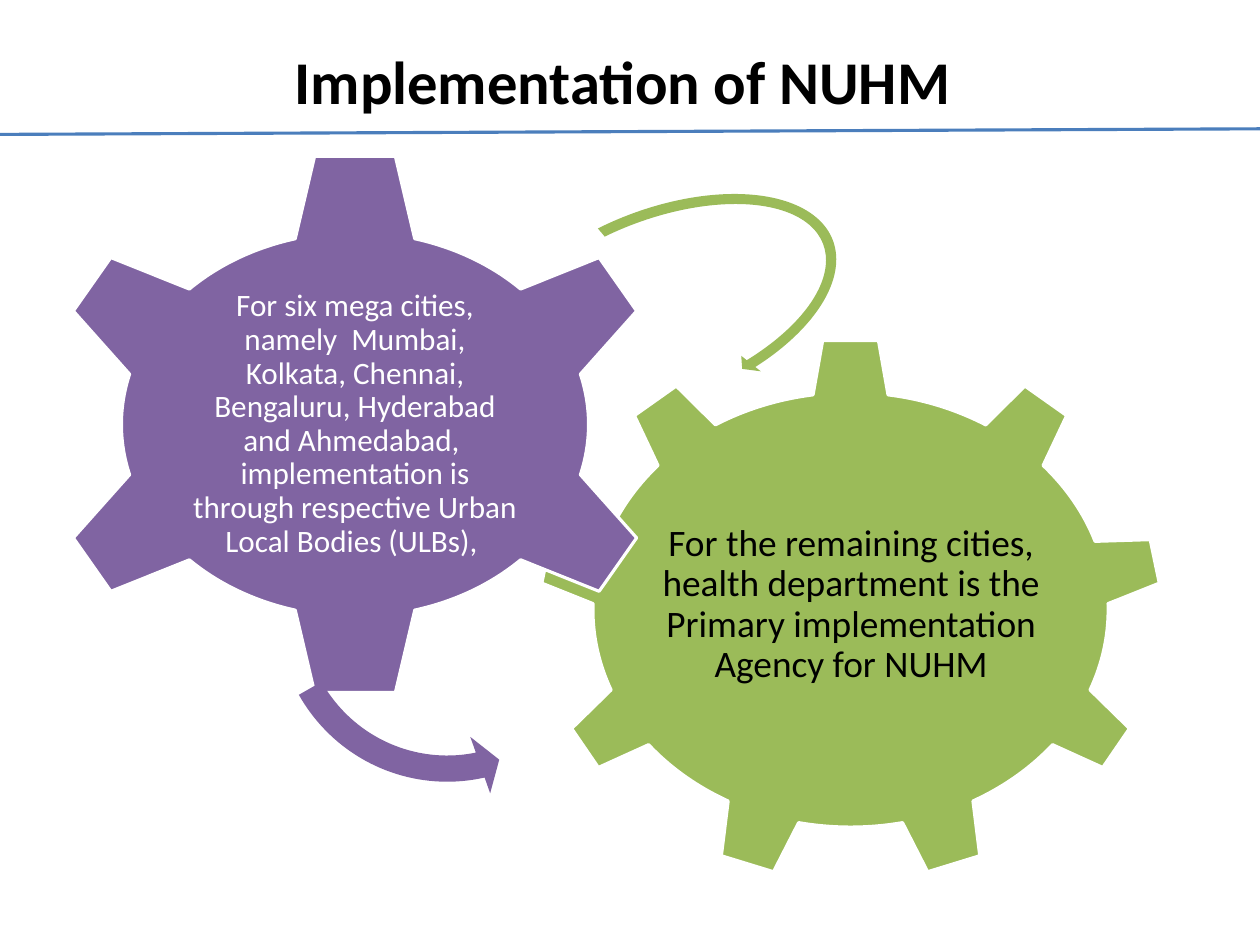
import pptx
import pptx.util
import pptx.dml.color
import pptx.enum.shapes
import pptx.enum.text
from lxml import etree

Inches = pptx.util.Inches
Pt = pptx.util.Pt
RGBColor = pptx.dml.color.RGBColor
SHAPE = pptx.enum.shapes.MSO_SHAPE
ANCHOR = pptx.enum.text.MSO_ANCHOR

BLACK = RGBColor(0, 0, 0)
WHITE = RGBColor(255, 255, 255)
GREEN = RGBColor(0x9B, 0xBB, 0x59)
PURPLE = RGBColor(0x80, 0x64, 0xA2)
BLUE = RGBColor(0x4B, 0x7E, 0xBC)

deck = pptx.Presentation()
deck.slide_width = Inches(11.25)
deck.slide_height = Inches(8.5)
slide = deck.slides.add_slide(deck.slide_layouts[6])


def add_text(text, box, size, color, bold=False, anchor=ANCHOR.MIDDLE,
             spacing=0.9, inset=(0.03, 0.03)):
    frame = slide.shapes.add_textbox(*map(Inches, box)).text_frame
    frame.word_wrap = True
    frame.vertical_anchor = anchor
    frame.margin_left = frame.margin_right = Inches(inset[0])
    frame.margin_top = frame.margin_bottom = Inches(inset[1])
    paragraph = frame.paragraphs[0]
    paragraph.alignment = pptx.enum.text.PP_ALIGN.CENTER
    paragraph.line_spacing = spacing
    run = paragraph.add_run()
    run.text = text
    run.font.name = "Calibri"
    run.font.size = Pt(size)
    run.font.bold = bold
    run.font.color.rgb = color


def add_filled(kind, box, fill):
    shape = slide.shapes.add_shape(kind, *map(Inches, box))
    shape.shadow.inherit = False
    shape.fill.solid()
    shape.fill.fore_color.rgb = fill
    return shape


add_text("Implementation of NUHM ", (0.56, 0.34, 10.12, 1.42), 39, BLACK,
         bold=True, anchor=ANCHOR.TOP, spacing=1.0, inset=(0.1, 0.05))

title_rule = slide.shapes.add_connector(
    pptx.enum.shapes.MSO_CONNECTOR.STRAIGHT,
    Inches(0), Inches(1.2), Inches(11.25), Inches(1.15))
title_rule.line.color.rgb = BLUE
title_rule.line.width = Pt(2)
etree.SubElement(title_rule._element.spPr, pptx.oxml.ns.qn("a:effectLst"))

gears = [
    (SHAPE.GEAR_9, (4.81, 3.02, 5.57, 4.85), GREEN,
     "For the remaining cities, health department is the Primary "
     "implementation Agency for NUHM",
     (5.88, 4.15, 3.44, 2.5), 24, BLACK),
    (SHAPE.GEAR_6, (0.35, 1.34, 5.64, 4.9), PURPLE,
     "For six mega cities, namely  Mumbai, Kolkata, Chennai, Bengaluru, "
     "Hyderabad and Ahmedabad,  implementation is through respective Urban "
     "Local Bodies (ULBs), ",
     (1.69, 2.58, 2.96, 2.42), 20, WHITE),
]
for kind, box, fill, text, text_box, size, color in gears:
    gear = add_filled(kind, box, fill)
    gear.line.color.rgb = WHITE
    gear.line.width = Pt(2)
    add_text(text, text_box, size, color)

# Adjustments: band width, head angle, end angle, start angle, head width
turn_arrows = [
    (SHAPE.CIRCULAR_ARROW, (4.22, 1.8, 3.39, 1.86), GREEN, 338.9,
     (0.05, 3.13, 32.56, 150.74, 0.06)),
    (SHAPE.LEFT_CIRCULAR_ARROW, (2.31, 3.78, 3.36, 3.34), PURPLE, 263,
     (0.07, 4.3, 104.89, 148.38, 0.08)),
]
for kind, box, fill, rotation, adjustments in turn_arrows:
    arrow = add_filled(kind, box, fill)
    arrow.line.fill.background()
    arrow.rotation = rotation
    for index, value in enumerate(adjustments):
        arrow.adjustments[index] = value

deck.save("out.pptx")
